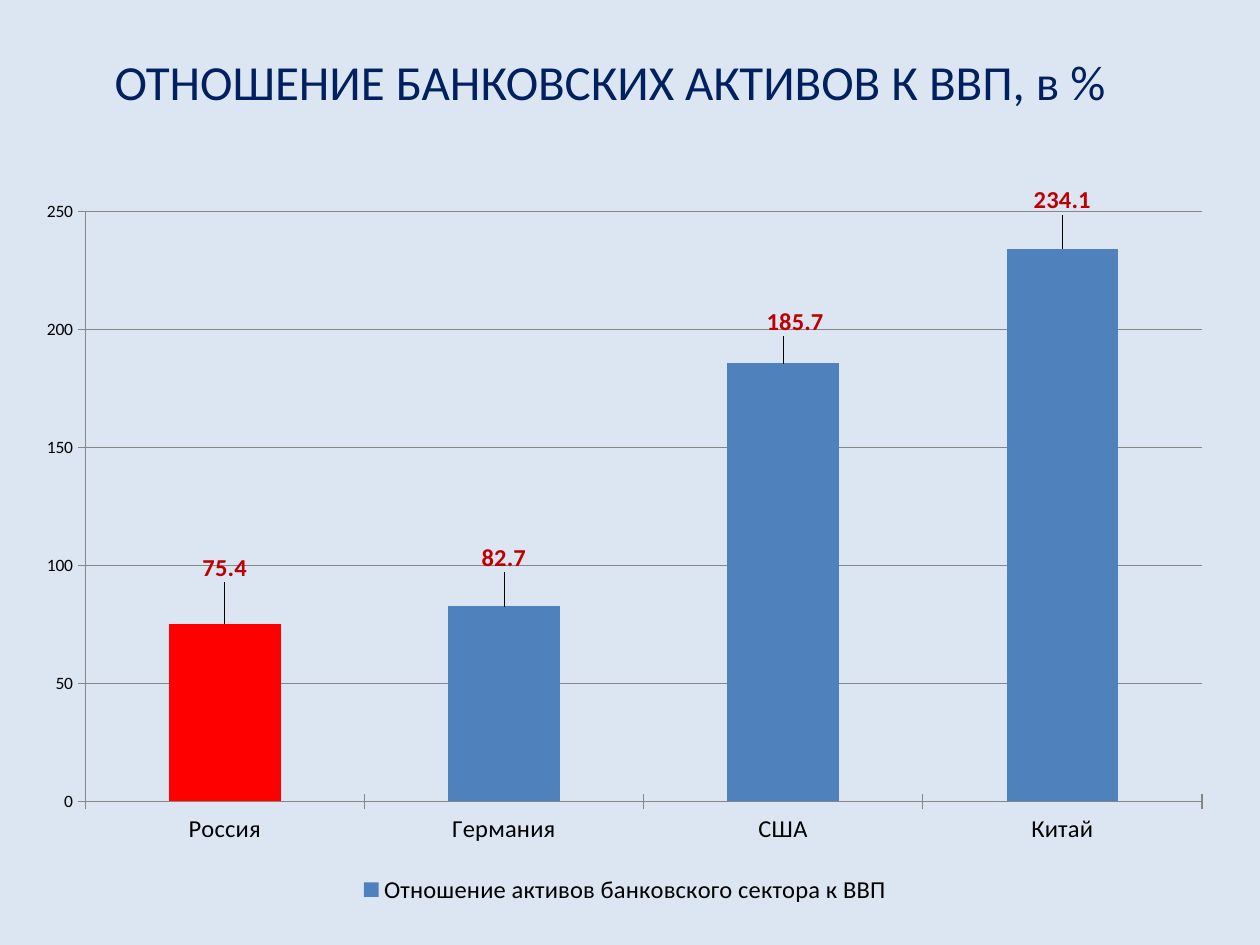
from pptx import Presentation
from pptx.chart.data import CategoryChartData
from pptx.dml.color import RGBColor
from pptx.enum.chart import XL_CHART_TYPE, XL_LABEL_POSITION, XL_LEGEND_POSITION, XL_TICK_MARK
from pptx.enum.text import MSO_AUTO_SIZE, PP_ALIGN
from pptx.oxml import parse_xml
from pptx.oxml.ns import nsdecls
from pptx.util import Pt

COLUMN = XL_CHART_TYPE.COLUMN_CLUSTERED
OUTSIDE_END = XL_LABEL_POSITION.OUTSIDE_END
BOTTOM = XL_LEGEND_POSITION.BOTTOM
CROSS = XL_TICK_MARK.CROSS
CENTER = PP_ALIGN.CENTER
FIT_SHAPE = MSO_AUTO_SIZE.SHAPE_TO_FIT_TEXT

FONT = "Calibri"
GREY = "868686"
VALUES = {"Россия": 75.4, "Германия": 82.7, "США": 185.7, "Китай": 234.1}
# Label shifts from the bar end, as fractions of the chart size
LABEL_SHIFTS = [(0, -0.05), (0, -0.04), (0.01, -0.03), (0, -0.04)]
PLOT_AREA = {"layoutTarget": "inner", "xMode": "edge", "yMode": "edge",
             "x": 0.05, "y": 0.03, "w": 0.93, "h": 0.82}


def color(value):
    return RGBColor.from_string(value)


def manual_layout(settings):
    """Return a c:layout element holding the given manual layout settings."""
    items = "".join(f'<c:{k} val="{v}"/>' for k, v in settings.items())
    return parse_xml(f'<c:layout {nsdecls("c")}><c:manualLayout>{items}'
                     '</c:manualLayout></c:layout>')


prs = Presentation()
prs.slide_width, prs.slide_height = Pt(720), Pt(540)
s = prs.slides.add_slide(prs.slide_layouts[6])
s.background.fill.solid()
s.background.fill.fore_color.rgb = color("DCE6F2")

# Chart
data = CategoryChartData(number_format="General")
data.categories = list(VALUES)
data.add_series("Отношение активов банковского сектора к ВВП", list(VALUES.values()))
chart = s.shapes.add_chart(COLUMN, Pt(14.4), Pt(105.8), Pt(686.2), Pt(414), data).chart
chart.has_title = False
chart.font.name = FONT
chart.font.size = Pt(10)
chart.font.color.rgb = color("000000")

chart.has_legend = True
chart.legend.position = BOTTOM
chart.legend.include_in_layout = False
chart.legend.font.size = Pt(14)

category_axis, value_axis = chart.category_axis, chart.value_axis
category_axis.tick_labels.font.size = Pt(14)
value_axis.minimum_scale, value_axis.maximum_scale = 0, 250
value_axis.major_unit = 50
value_axis.has_major_gridlines = True
for axis in (category_axis, value_axis):
    axis.major_tick_mark = CROSS
for part in (category_axis, value_axis, value_axis.major_gridlines):
    part.format.line.color.rgb = color(GREY)
    part.format.line.width = Pt(0.75)

plot = chart.plots[0]
plot.vary_by_categories = False
plot.gap_width = 150
series = plot.series[0]
russia = series.points[0]
for bar, fill in ((series, "4F81BD"), (russia, "FF0000")):
    bar.format.fill.solid()
    bar.format.fill.fore_color.rgb = color(fill)

for i in range(len(VALUES)):
    label = series.points[i].data_label
    label.position = OUTSIDE_END
    for name, value in {"size": Pt(14), "bold": True, "name": FONT}.items():
        setattr(label.font, name, value)
    label.font.color.rgb = color("C00000")

for label, (x, y) in zip(chart.element.xpath(".//c:dLbl"), LABEL_SHIFTS):
    label.insert(1, manual_layout({"x": x, "y": y}))

plot_area = chart.element.xpath(".//c:plotArea")[0]
for layout in plot_area.xpath("./c:layout"):
    plot_area.remove(layout)
plot_area.insert(0, manual_layout(PLOT_AREA))

# Title
tf = s.shapes.add_textbox(Pt(31), Pt(26), Pt(635), Pt(41)).text_frame
tf.word_wrap = True
tf.auto_size = FIT_SHAPE
p = tf.paragraphs[0]
p.alignment = CENTER
r = p.add_run()
r.text = "ОТНОШЕНИЕ БАНКОВСКИХ АКТИВОВ К ВВП, в %"
r.font.name = FONT
r.font.size = Pt(28)
r.font.color.rgb = color("002060")

prs.save("out.pptx")
